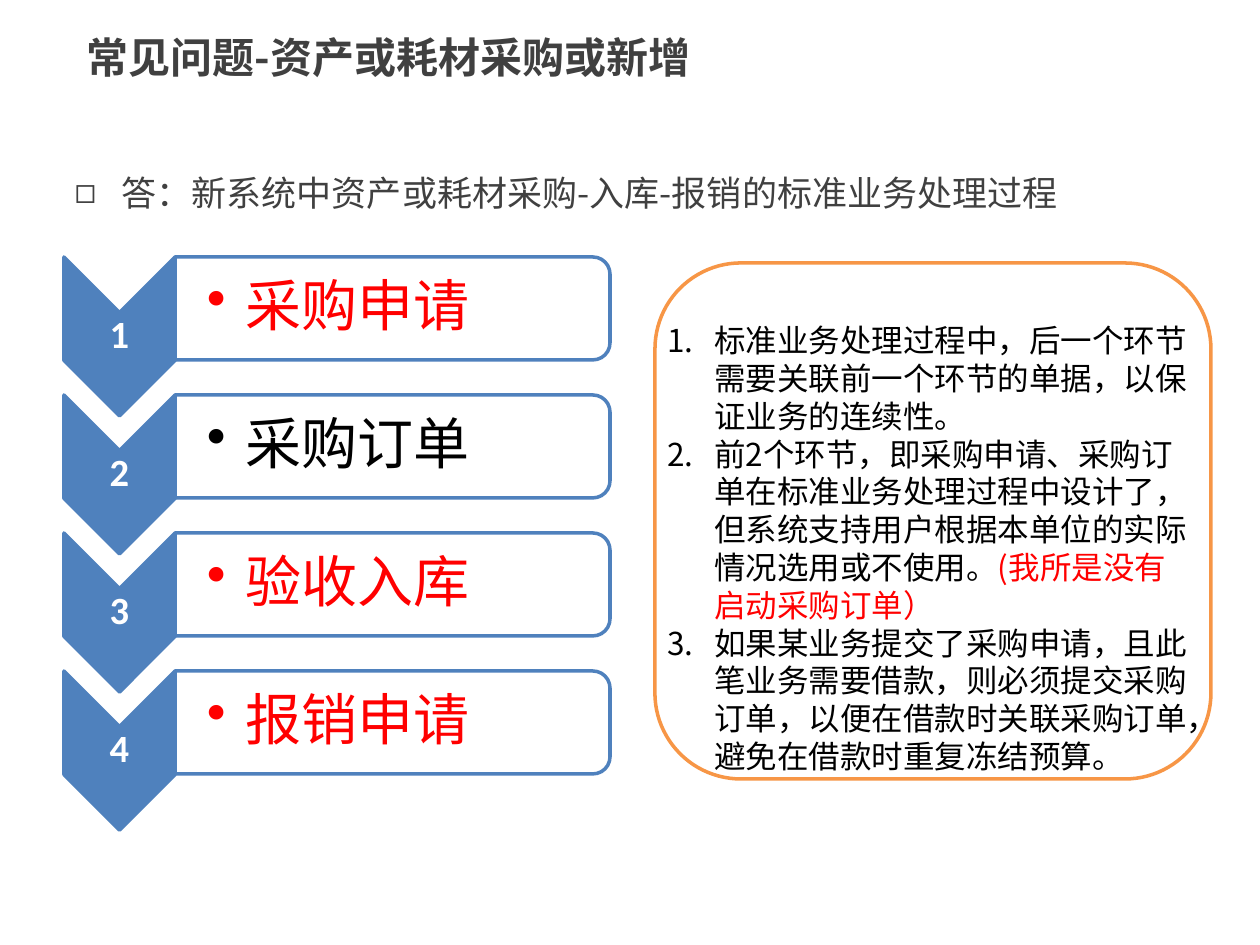
from lxml import etree
from pptx import Presentation
from pptx.dml.color import RGBColor
from pptx.enum.shapes import MSO_SHAPE
from pptx.enum.text import MSO_ANCHOR, PP_ALIGN
from pptx.oxml.ns import qn
from pptx.util import Emu, Pt

PX = 914400 / 126

CHEVRON = MSO_SHAPE.CHEVRON
CARD = MSO_SHAPE.ROUND_2_SAME_RECTANGLE
ROUNDED = MSO_SHAPE.ROUNDED_RECTANGLE
TOP, MIDDLE = MSO_ANCHOR.TOP, MSO_ANCHOR.MIDDLE
LEFT, CENTER = PP_ALIGN.LEFT, PP_ALIGN.CENTER

BLUE = RGBColor(0x4F, 0x81, 0xBD)
ORANGE = RGBColor(0xF7, 0x96, 0x46)
RED = RGBColor(0xFF, 0x00, 0x00)
BLACK = RGBColor(0x00, 0x00, 0x00)
WHITE = RGBColor(0xFF, 0xFF, 0xFF)
GREY = RGBColor(0x40, 0x40, 0x40)

LATIN_FONT = "Calibri"
CJK_FONT = "Noto Sans CJK SC"

STEP_PITCH = 138
STEPS = [
    ("采购申请", RED),
    ("采购订单", BLACK),
    ("验收入库", RED),
    ("报销申请", RED),
]
NOTES = [
    [("标准业务处理过程中，后一个环节需要关联前一个环节的单据，以保证业务的连续性。", BLACK)],
    [
        ("前2个环节，即采购申请、采购订单在标准业务处理过程中设计了，"
         "但系统支持用户根据本单位的实际情况选用或不使用。", BLACK),
        ("(我所是没有启动采购订单）", RED),
    ],
    [("如果某业务提交了采购申请，且此笔业务需要借款，则必须提交采购订单，"
      "以便在借款时关联采购订单，避免在借款时重复冻结预算。", BLACK)],
]


def px(value):
    return Emu(round(value * PX))


def place(shape, left, top, width, height):
    shape.left, shape.top = px(left), px(top)
    shape.width, shape.height = px(width), px(height)


def add_run(paragraph, text, size, color, font=CJK_FONT, bold=False):
    run = paragraph.add_run()
    run.text = text
    run.font.size = Pt(size)
    run.font.bold = bold
    run.font.color.rgb = color
    run.font.name = font
    if font == CJK_FONT:
        properties = run.font._element
        etree.SubElement(properties, qn("a:ea")).set("typeface", font)


def set_bullet(paragraph, indent, tag, **attributes):
    """Give the paragraph a hanging indent and a bullet element."""
    properties = paragraph._p.get_or_add_pPr()
    properties.set("marL", str(px(indent)))
    properties.set("indent", str(-px(indent)))
    bullet = etree.SubElement(properties, qn(tag))
    for name, value in attributes.items():
        bullet.set(name, value)


def add_outline_shape(slide, kind, box, fill, line, rotation=0):
    shape = slide.shapes.add_shape(kind, *map(px, box))
    shape.rotation = rotation
    shape.shadow.inherit = False
    shape.fill.solid()
    shape.fill.fore_color.rgb = fill
    shape.line.color.rgb = line
    shape.line.width = Pt(2)
    return shape


def add_text_frame(slide, box, anchor=TOP, insets=None):
    """Add a wrapping text box; insets are left, top, right, bottom in px."""
    frame = slide.shapes.add_textbox(*map(px, box)).text_frame
    frame.word_wrap = True
    frame.vertical_anchor = anchor
    if insets:
        (frame.margin_left, frame.margin_top,
         frame.margin_right, frame.margin_bottom) = map(px, insets)
    return frame


def add_step(slide, index, label, color):
    offset = index * STEP_PITCH
    add_outline_shape(slide, CHEVRON, (40, 281 + offset, 159, 111), BLUE, BLUE, 90)
    number_frame = add_text_frame(slide, (64, 312 + offset, 111, 48), MIDDLE, (2, 2, 2, 2))
    number = number_frame.paragraphs[0]
    number.alignment = CENTER
    number.line_spacing = 0.9
    add_run(number, str(index + 1), 22, WHITE, LATIN_FONT, bold=True)

    card = add_outline_shape(slide, CARD, (341, 91 + offset, 103, 435), WHITE, BLUE, 90)
    fill_color = card._element.spPr.find(qn("a:solidFill"))[0]
    etree.SubElement(fill_color, qn("a:alpha")).set("val", "90000")
    label_frame = add_text_frame(slide, (176, 262 + offset, 430, 93), MIDDLE, (31, 2, 2, 2))
    paragraph = label_frame.paragraphs[0]
    set_bullet(paragraph, 39, "a:buChar", char="•")
    paragraph.level = 1
    paragraph.line_spacing = 0.9
    add_run(paragraph, label, 32, color, LATIN_FONT)


def add_notes_panel(slide):
    add_outline_shape(slide, ROUNDED, (655, 263, 556, 516), WHITE, ORANGE)
    frame = add_text_frame(slide, (655, 315, 546, 471))
    for index, runs in enumerate(NOTES):
        paragraph = frame.add_paragraph() if index else frame.paragraphs[0]
        set_bullet(paragraph, 47, "a:buAutoNum", type="arabicPeriod")
        for text, color in runs:
            add_run(paragraph, text, 18, color)


def fill_title(slide):
    title = slide.shapes.title
    place(title, 74, 15, 1120, 84)
    title.text_frame.vertical_anchor = MIDDLE
    paragraph = title.text_frame.paragraphs[0]
    paragraph.alignment = LEFT
    add_run(paragraph, "常见问题-资产或耗材采购或新增", 24, GREY, bold=True)


def fill_answer(slide):
    body = slide.placeholders[1]
    place(body, 62, 165, 1134, 72)
    paragraph = body.text_frame.paragraphs[0]
    set_bullet(paragraph, 47, "a:buChar", char="◻")
    paragraph.space_before = Pt(0)
    add_run(paragraph, "答：新系统中资产或耗材采购-入库-报销的标准业务处理过程", 20, GREY)


def main():
    presentation = Presentation()
    presentation.slide_width, presentation.slide_height = px(1260), px(945)
    slide = presentation.slides.add_slide(presentation.slide_layouts[1])
    fill_title(slide)
    fill_answer(slide)
    for index, (label, color) in enumerate(STEPS):
        add_step(slide, index, label, color)
    add_notes_panel(slide)
    presentation.save("out.pptx")


if __name__ == "__main__":
    main()
